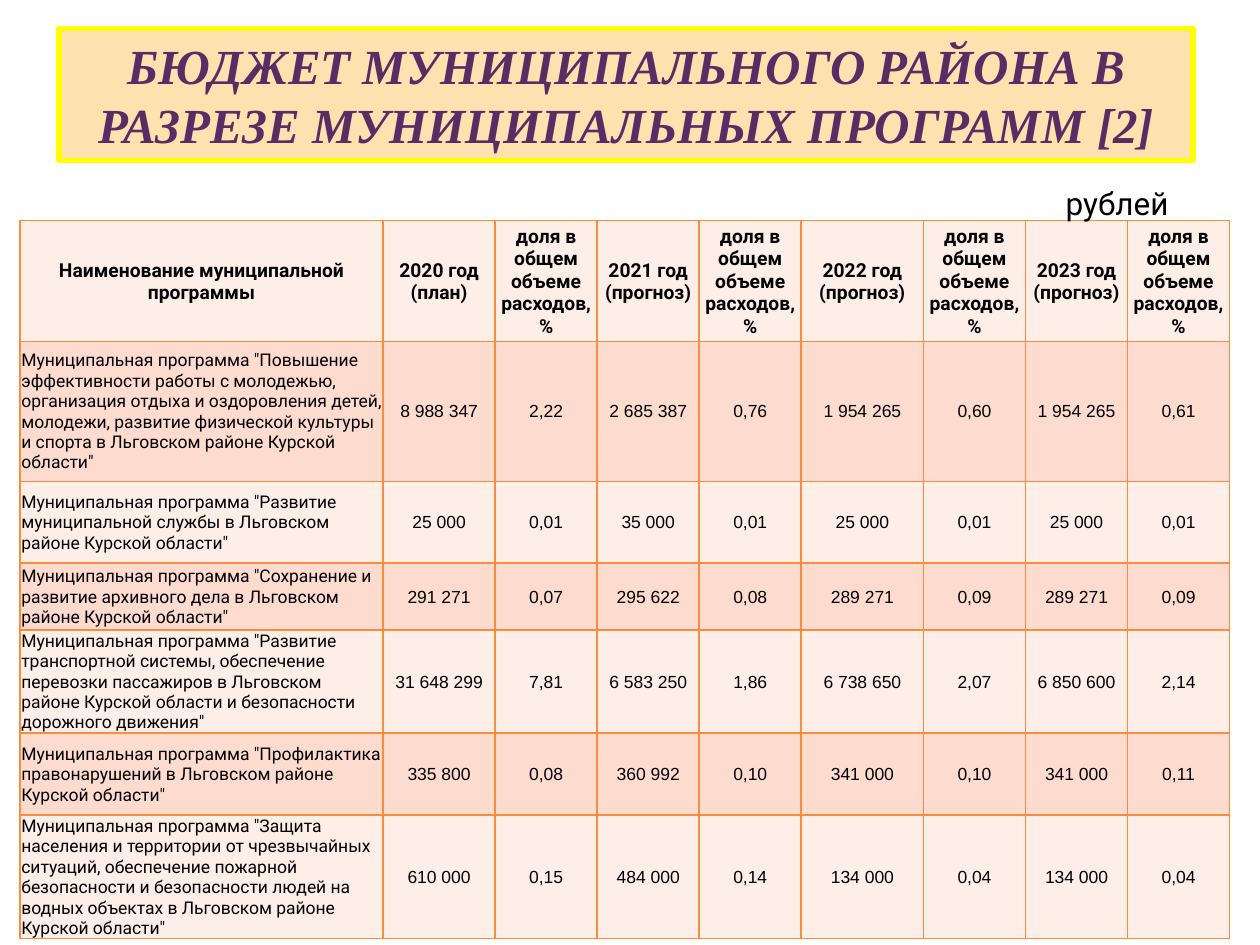
import dataclasses

import pptx
import pptx.dml.color
import pptx.enum.text
import pptx.oxml
import pptx.oxml.ns
import pptx.util

ALIGN = pptx.enum.text.PP_ALIGN
MIDDLE = pptx.enum.text.MSO_ANCHOR.MIDDLE
WIDTH, HEIGHT = 10, 7.5


@dataclasses.dataclass(frozen=True)
class Theme:
    """Colours, fonts and type sizes of the slide."""
    title_fill: str = "FDE2B0"
    title_line: str = "FFFF00"
    title_text: str = "5A2C64"
    title_outline: str = "5E1A50"
    text: str = "000000"
    border: str = "FA8D3D"
    bands: tuple = ("FEEEE8", "FDDBCE")
    title_font: str = "Times New Roman"
    label_font: str = "Roboto"
    number_font: str = "Arial"
    title_size: int = 28
    unit_size: int = 18
    head_size: int = 11
    body_size: int = 10


THEME = Theme()
TITLE = "БЮДЖЕТ МУНИЦИПАЛЬНОГО РАЙОНА В РАЗРЕЗЕ МУНИЦИПАЛЬНЫХ ПРОГРАММ [2]"
SHARE = "доля в общем объеме расходов, %"
YEARS = ["2020 год (план)", "2021 год (прогноз)", "2022 год (прогноз)", "2023 год (прогноз)"]
HEADER = ["Наименование муниципальной программы"] + [h for year in YEARS for h in (year, SHARE)]
PROGRAMS = [
    ("\"Повышение эффективности работы с молодежью, организация отдыха и оздоровления детей, "
     "молодежи, развитие физической культуры и спорта в Льговском районе Курской области\"",
     "8 988 347", "2,22", "2 685 387", "0,76", "1 954 265", "0,60", "1 954 265", "0,61"),
    ("\"Развитие муниципальной службы в Льговском районе Курской области\"",
     "25 000", "0,01", "35 000", "0,01", "25 000", "0,01", "25 000", "0,01"),
    ("\"Сохранение и развитие архивного дела в Льговском районе Курской области\"",
     "291 271", "0,07", "295 622", "0,08", "289 271", "0,09", "289 271", "0,09"),
    ("\"Развитие транспортной системы, обеспечение перевозки пассажиров в Льговском районе "
     "Курской области и безопасности дорожного движения\"",
     "31 648 299", "7,81", "6 583 250", "1,86", "6 738 650", "2,07", "6 850 600", "2,14"),
    ("\"Профилактика правонарушений в Льговском районе Курской области\"",
     "335 800", "0,08", "360 992", "0,10", "341 000", "0,10", "341 000", "0,11"),
    ("\"Защита населения и территории от чрезвычайных ситуаций, обеспечение пожарной "
     "безопасности и безопасности людей на водных объектах в Льговском районе Курской области\"",
     "610 000", "0,15", "484 000", "0,14", "134 000", "0,04", "134 000", "0,04"),
]
COLUMNS = [2.88, 0.89, 0.81, 0.81, 0.81, 0.97, 0.81, 0.81, 0.81]
ROWS = [0.96, 1.11, 0.65, 0.53, 0.76, 0.65, 0.87]


def rgb(value):
    """Return a colour object for a hex value."""
    return pptx.dml.color.RGBColor.from_string(value)


def inches(box):
    """Convert a box in inches to lengths."""
    return [pptx.util.Inches(v) for v in box]


def line_xml(tag, color, points):
    """Return a solid line element with the given tag."""
    return pptx.oxml.parse_xml(
        f'<a:{tag} {pptx.oxml.ns.nsdecls("a")} w="{round(points * 12700)}">'
        f'<a:solidFill><a:srgbClr val="{color}"/></a:solidFill></a:{tag}>')


def write(tf, text, size, font, color=THEME.text, bold=False, italic=False, align=ALIGN.CENTER):
    """Write one formatted paragraph and return its run."""
    p = tf.paragraphs[0]
    p.alignment = align
    r = p.add_run()
    r.text = text
    r.font.size, r.font.name = pptx.util.Pt(size), font
    r.font.bold, r.font.italic = bold, italic
    r.font.color.rgb = rgb(color)
    return r


def add_title(s, box):
    """Place the framed slide title in the box."""
    sp = s.shapes.title
    sp.left, sp.top, sp.width, sp.height = inches(box)
    sp.fill.solid()
    sp.fill.fore_color.rgb = rgb(THEME.title_fill)
    sp.line.color.rgb = rgb(THEME.title_line)
    sp.line.width = pptx.util.Pt(3.15)
    tf = sp.text_frame
    tf.word_wrap, tf.vertical_anchor = True, MIDDLE
    tf.auto_size = pptx.enum.text.MSO_AUTO_SIZE.NONE
    tf.margin_left = tf.margin_right = pptx.util.Inches(0.05)
    tf.margin_top = tf.margin_bottom = 0
    r = write(tf, TITLE, THEME.title_size, THEME.title_font, THEME.title_text, bold=True, italic=True)
    r.font._element.insert(0, line_xml("ln", THEME.title_outline, 0.04))


def add_unit(s, box):
    """Place the unit of measure in the box."""
    tf = s.shapes.add_textbox(*inches(box)).text_frame
    tf.word_wrap = False
    tf.auto_size = pptx.enum.text.MSO_AUTO_SIZE.SHAPE_TO_FIT_TEXT
    write(tf, "рублей", THEME.unit_size, THEME.label_font, align=ALIGN.LEFT)


def format_cell(cell, fill):
    """Set the fill, margins and borders of a table cell."""
    cell.fill.solid()
    cell.fill.fore_color.rgb = rgb(fill)
    cell.vertical_anchor = MIDDLE
    cell.margin_left = cell.margin_right = cell.margin_top = pptx.util.Inches(0.01)
    cell.margin_bottom = 0
    for i, tag in enumerate(("lnL", "lnR", "lnT", "lnB")):
        cell._tc.get_or_add_tcPr().insert(i, line_xml(tag, THEME.border, 1))


def add_budget(s, box):
    """Place the budget table in the box, sharing it out by column and row weights."""
    left, top, width, height = inches(box)
    table = s.shapes.add_table(len(ROWS), len(COLUMNS), left, top, width, height).table
    for column, weight in zip(table.columns, COLUMNS):
        column.width = round(width * weight / sum(COLUMNS))
    for row, weight in zip(table.rows, ROWS):
        row.height = round(height * weight / sum(ROWS))
    for i, values in enumerate([HEADER, *PROGRAMS]):
        for j, value in enumerate(values):
            cell = table.cell(i, j)
            format_cell(cell, THEME.bands[i % 2])
            if i == 0:
                write(cell.text_frame, value, THEME.head_size, THEME.label_font, bold=True)
            elif j == 0:
                write(cell.text_frame, f"Муниципальная программа {value}",
                      THEME.body_size, THEME.label_font, align=ALIGN.LEFT)
            else:
                write(cell.text_frame, value, THEME.body_size, THEME.number_font)


def main():
    """Build the slide and save it."""
    prs = pptx.Presentation()
    prs.slide_width, prs.slide_height = inches((WIDTH, HEIGHT))
    s = prs.slides.add_slide(prs.slide_layouts[5])
    add_title(s, (0.047 * WIDTH, 0.03 * HEIGHT, 0.9 * WIDTH, 0.14 * HEIGHT))
    add_budget(s, (0.016 * WIDTH, 1.75, sum(COLUMNS), sum(ROWS)))
    add_unit(s, (8.36, 1.41, 1.03, 0.4))
    prs.save("out.pptx")


if __name__ == "__main__":
    main()
